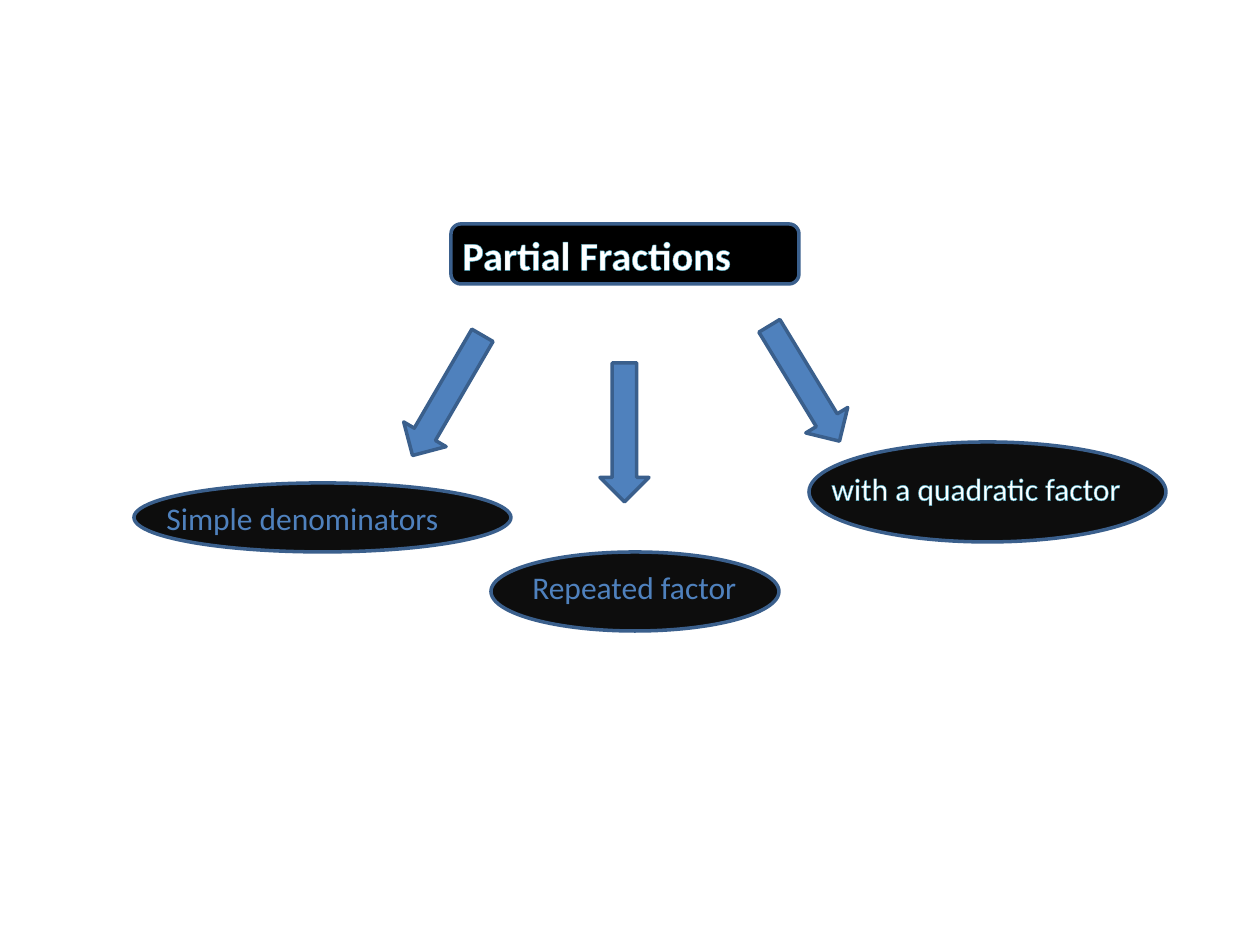
import pptx
import pptx.dml.color
import pptx.enum.shapes
import pptx.enum.text
import pptx.util
import lxml.etree
import pptx.oxml.ns

RGBColor = pptx.dml.color.RGBColor
SHAPES = pptx.enum.shapes.MSO_SHAPE

PX = 914400 // 126
BLACK = RGBColor(0x00, 0x00, 0x00)
NEAR_BLACK = RGBColor(0x0D, 0x0D, 0x0D)
WHITE = RGBColor(0xFF, 0xFF, 0xFF)
BLUE = RGBColor(0x4F, 0x81, 0xBD)
DARK_BLUE = RGBColor(0x3A, 0x5F, 0x8C)
AQUA = RGBColor(0x4B, 0xAC, 0xC6)


def add_text(paragraph, text, *, size=18, color=BLUE, bold=False, outline=None):
    run = paragraph.add_run()
    run.text = text
    run.font.name = "Calibri"
    run.font.size = pptx.util.Pt(size)
    run.font.bold = bold
    run.font.color.rgb = color
    if outline is not None:
        qn = pptx.oxml.ns.qn
        line = lxml.etree.Element(qn("a:ln"), w=str(pptx.util.Pt(0.8)))
        fill = lxml.etree.SubElement(line, qn("a:solidFill"))
        lxml.etree.SubElement(fill, qn("a:srgbClr"), val=str(outline))
        run.font._element.insert(0, line)


class DiagramSlide:
    line_color = DARK_BLUE
    line_width = pptx.util.Pt(2)

    def __init__(self, presentation):
        self.slide = presentation.slides.add_slide(presentation.slide_layouts[6])

    def shape(self, kind, box, fill, rotation=0):
        shape = self.slide.shapes.add_shape(kind, *(length * PX for length in box))
        shape.shadow.inherit = False
        shape.fill.solid()
        shape.fill.fore_color.rgb = fill
        shape.line.color.rgb = self.line_color
        shape.line.width = self.line_width
        shape.rotation = rotation

    def label(self, text, box, wrap=True, **text_format):
        text_box = self.slide.shapes.add_textbox(*(length * PX for length in box))
        frame = text_box.text_frame
        frame.word_wrap = wrap
        frame.auto_size = pptx.enum.text.MSO_AUTO_SIZE.SHAPE_TO_FIT_TEXT
        add_text(frame.paragraphs[0], text, **text_format)


def main():
    presentation = pptx.Presentation()
    presentation.slide_width = 1260 * PX
    presentation.slide_height = 945 * PX
    diagram = DiagramSlide(presentation)

    for ellipse in [(809, 442, 357, 100), (491, 552, 288, 79), (134, 483, 377, 69)]:
        diagram.shape(SHAPES.OVAL, ellipse, NEAR_BLACK)

    diagram.shape(SHAPES.ROUNDED_RECTANGLE, (451, 224, 348, 60), BLACK)
    diagram.label("Partial Fractions", (450, 224, 388, 62),
                  size=23, color=WHITE, bold=True, outline=AQUA)

    for arrow, rotation in [
        ((423, 326, 49, 139), 30.2),
        ((600, 363, 49, 139), 0),
        ((780, 316, 49, 135), 328.7),
    ]:
        diagram.shape(SHAPES.DOWN_ARROW, arrow, BLUE, rotation)

    diagram.label("Simple denominators", (154, 493, 324, 50), wrap=False)
    diagram.label("Repeated factor", (520, 562, 252, 50))
    diagram.label("with a quadratic factor", (819, 463, 336, 50), wrap=False,
                  color=WHITE, outline=AQUA)

    presentation.save("out.pptx")


if __name__ == "__main__":
    main()
